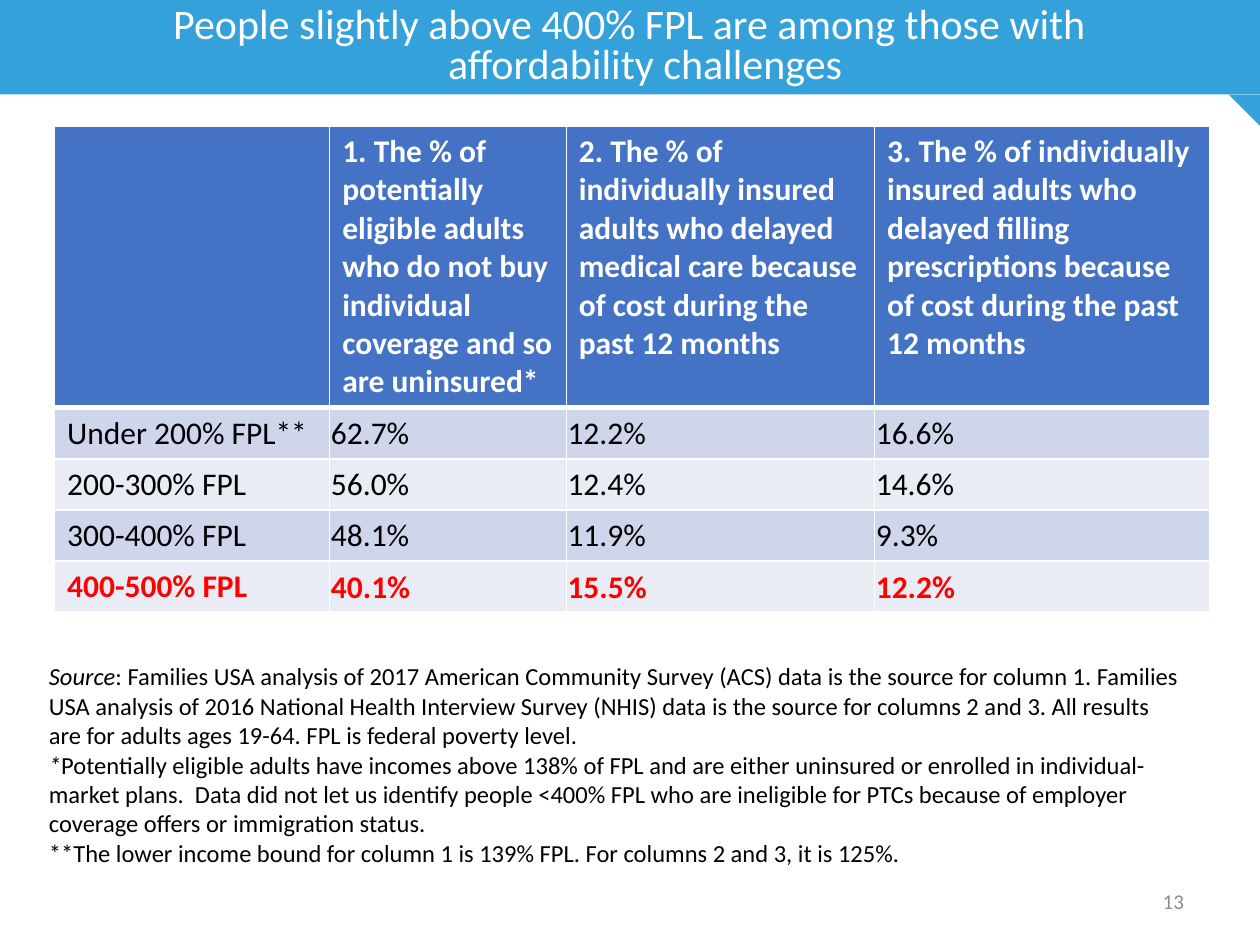
"""Build the slide on affordability challenges by income level."""
from lxml.etree import SubElement
from pptx import Presentation
from pptx.dml.color import RGBColor as Rgb
from pptx.enum.shapes import MSO_SHAPE as Shape
from pptx.enum.text import MSO_ANCHOR as Anchor, MSO_AUTO_SIZE as AutoSize, PP_ALIGN as Align
from pptx.oxml.ns import qn
from pptx.util import Pt

COLORS = {"sky": "34A1DA", "header": "4472C4", "band": "CFD5EA", "light": "E9EBF5",
          "white": "FFFFFF", "black": "000000", "red": "FF0000", "gray": "8C8C8C"}

HEADINGS = [
    "",
    "1. The % of potentially eligible adults who do not buy individual coverage "
    "and so are uninsured*",
    "2. The % of individually insured adults who delayed medical care because "
    "of cost during the past 12 months",
    "3. The % of individually insured adults who delayed filling prescriptions "
    "because of cost during the past 12 months",
]
INCOME_ROWS = [
    ["Under 200% FPL**", "62.7%", "12.2%", "16.6%"],
    ["200-300% FPL", "56.0%", "12.4%", "14.6%"],
    ["300-400% FPL", "48.1%", "11.9%", "9.3%"],
    ["400-500% FPL", "40.1%", "15.5%", "12.2%"],
]
NOTES = [
    [("Source", True),
     (": Families USA analysis of 2017 American Community Survey (ACS) data is the source "
      "for column 1. Families USA analysis of 2016 National Health Interview Survey (NHIS) "
      "data is the source for columns 2 and 3. All results are for adults ages 19-64. "
      "FPL is federal poverty level.", False)],
    [("*", True),
     ("Potentially eligible adults have incomes above 138% of FPL and are either uninsured "
      "or enrolled in individual-market plans.  Data did not let us identify people <400% FPL "
      "who are ineligible for PTCs because of employer coverage offers or immigration "
      "status.", False)],
    [("**The lower income bound for column 1 is 139% FPL. For columns 2 and 3, "
      "it is 125%.", False)],
]


class SlideBuilder:
    def __init__(self, slide, font="Calibri"):
        self.slide = slide
        self.shapes = slide.shapes
        self.font = font

    def style(self, run, size, color, bold=False, italic=False):
        run.font.name = self.font
        run.font.size = Pt(size)
        run.font.bold = bold
        run.font.italic = italic
        run.font.color.rgb = Rgb.from_string(COLORS[color])

    def block(self, preset, box, color, rotation=0):
        block = self.shapes.add_shape(preset, *map(Pt, box))
        block.shadow.inherit = False
        block.rotation = rotation
        block.fill.solid()
        block.fill.fore_color.rgb = Rgb.from_string(COLORS[color])
        block.line.fill.background()

    def title(self, text, box, size, color):
        title = self.shapes.title
        self.shapes._spTree.append(title._element)
        title.left, title.top, title.width, title.height = map(Pt, box)
        frame = title.text_frame
        frame.text = text
        frame.auto_size = AutoSize.NONE
        frame.vertical_anchor = Anchor.MIDDLE
        heading = frame.paragraphs[0]
        properties = heading._p.get_or_add_pPr()
        properties.set("marL", str(Pt(18)))
        properties.set("indent", str(Pt(-18)))
        heading.alignment = Align.CENTER
        heading.line_spacing = 0.8
        self.style(heading.runs[0], size, color)

    def text(self, paragraphs, box, size, color, align=Align.LEFT, anchor=Anchor.TOP):
        frame = self.shapes.add_textbox(*map(Pt, box)).text_frame
        frame.word_wrap = True
        frame.vertical_anchor = anchor
        for index, parts in enumerate(paragraphs):
            paragraph = frame.add_paragraph() if index else frame.paragraphs[0]
            paragraph.alignment = align
            for words, italic in parts:
                run = paragraph.add_run()
                run.text = words
                self.style(run, size, color, italic=italic)

    def borders(self, cell, **widths):
        properties = cell._tc.get_or_add_tcPr()
        for side in "LRTB":
            line = SubElement(properties, qn(f"a:ln{side}"), w=str(Pt(widths.get(side, 1))))
            SubElement(SubElement(line, qn("a:solidFill")), qn("a:srgbClr"), val=COLORS["white"])

    def cell(self, cell, text, fill, color, bold, **widths):
        self.borders(cell, **widths)
        cell.fill.solid()
        cell.fill.fore_color.rgb = Rgb.from_string(COLORS[fill])
        cell.text = text
        for run in cell.text_frame.paragraphs[0].runs:
            self.style(run, 18, color, bold)

    def table(self, headings, rows, corner, widths, header_height, row_height):
        height = header_height + row_height * len(rows)
        table = self.shapes.add_table(len(rows) + 1, len(headings), *map(
            Pt, (*corner, sum(widths), height))).table
        for column, width in zip(table.columns, widths):
            column.width = Pt(width)
        table.rows[0].height = Pt(header_height)
        for column, heading in enumerate(headings):
            self.cell(table.cell(0, column), heading, "header", "white", True, B=3)
        for number, values in enumerate(rows, 1):
            table.rows[number].height = Pt(row_height)
            fill = "band" if number % 2 else "light"
            last = number == len(rows)
            top = 3 if number == 1 else 1
            for column, value in enumerate(values):
                cell = table.cell(number, column)
                self.cell(cell, value, fill, "red" if last else "black", last, T=top)
                cell.vertical_anchor = Anchor.MIDDLE
                if column:
                    cell.margin_left = cell.margin_right = cell.margin_top = Pt(0.75)
                    cell.margin_bottom = 0


def main():
    deck = Presentation()
    deck.slide_width, deck.slide_height = Pt(720), Pt(540)
    builder = SlideBuilder(deck.slides.add_slide(deck.slide_layouts[5]))
    builder.block(Shape.RECTANGLE, (0, 0, 720, 54), "sky")
    builder.block(Shape.RIGHT_TRIANGLE, (702, 54, 18, 18), "sky", rotation=180)
    builder.table(HEADINGS, INCOME_ROWS, (31.2, 72), (157.2, 135.2, 176.2, 191.4), 158.4, 29.2)
    builder.text([[("13", False)]], (650, 500.4, 41, 28.8), 12, "gray",
                 Align.CENTER, Anchor.MIDDLE)
    builder.title("People slightly above 400% FPL are among those with affordability challenges",
                  (38.2, 0, 643, 54), 24, "white")
    builder.text(NOTES, (20.9, 374.4, 660.2, 126), 14, "black")
    deck.save("out.pptx")


if __name__ == "__main__":
    main()
